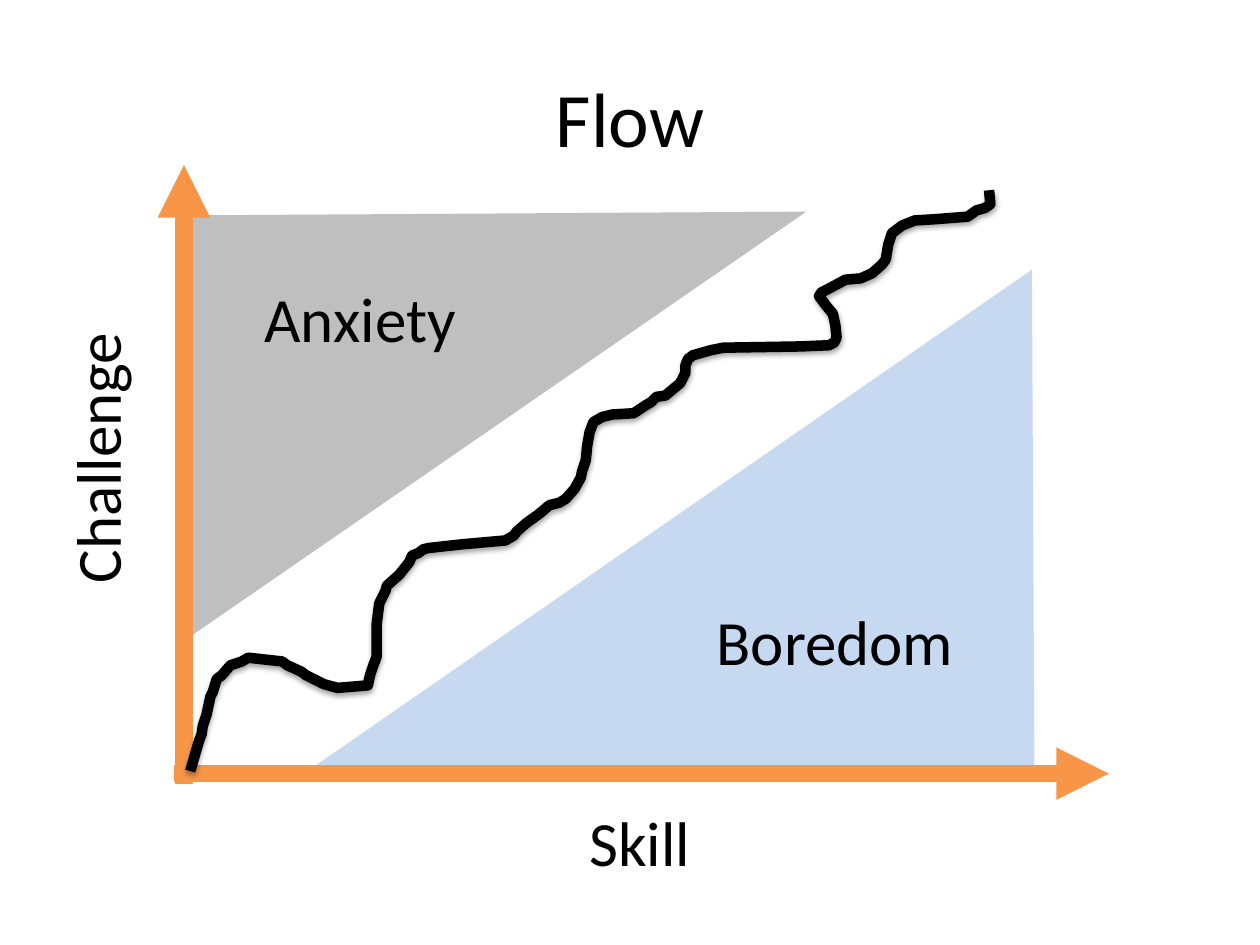
import lxml.etree
import pptx
import pptx.dml.color
import pptx.enum.dml
import pptx.enum.shapes
import pptx.enum.text
import pptx.oxml.ns
import pptx.util

EMU_PER_PX = 9144
BLACK = pptx.dml.color.RGBColor(0x00, 0x00, 0x00)
ORANGE = pptx.dml.color.RGBColor(0xF7, 0x96, 0x46)
GRAY = pptx.dml.color.RGBColor(0xBF, 0xBF, 0xBF)
LIGHT_BLUE = pptx.dml.color.RGBColor(0xC6, 0xD9, 0xF1)

ANXIETY_CORNERS = [(1, 377), (494, 37), (-2, 40)]
BOREDOM_CORNERS = [(98, 481), (673, 83), (675, 480)]
FLOW_POINTS = [
    (0, 461), (7, 437), (9, 432), (10, 425), (13, 416), (16, 402), (18, 398),
    (21, 388), (25, 385), (32, 377), (41, 374), (46, 371), (73, 374), (77, 377),
    (88, 382), (92, 385), (98, 388), (106, 392), (117, 395), (141, 393),
    (142, 388), (143, 384), (145, 378), (148, 370), (148, 344), (150, 328),
    (152, 324), (155, 318), (156, 314), (166, 305), (170, 300), (174, 295),
    (176, 290), (181, 288), (185, 285), (189, 284), (216, 281), (250, 278),
    (257, 274), (259, 271), (267, 264), (274, 259), (278, 256), (285, 250),
    (293, 248), (298, 245), (305, 237), (310, 228), (311, 223), (314, 214),
    (315, 203), (317, 192), (320, 184), (327, 180), (335, 178), (352, 177),
    (361, 171), (366, 168), (370, 164), (377, 163), (389, 153), (391, 149),
    (393, 145), (393, 139), (395, 134), (399, 131), (413, 127), (423, 125),
    (484, 124), (507, 123), (511, 121), (513, 117), (512, 107), (510, 98),
    (505, 92), (499, 84), (501, 81), (507, 78), (520, 71), (532, 70),
    (541, 66), (549, 59), (552, 55), (554, 43), (557, 34), (565, 28),
    (575, 24), (591, 23), (617, 21), (624, 16), (631, 14), (635, 11), (634, 0),
]


def px(value):
    return pptx.util.Emu(value * EMU_PER_PX)


def add_outline(page, left, top, points, closed):
    builder = page.shapes.build_freeform(*points[0], scale=EMU_PER_PX)
    builder.add_line_segments(points[1:], close=closed)
    shape = builder.convert_to_shape(px(left), px(top))
    shape.shadow.inherit = False
    return shape


def add_region(page, box, corners, color):
    region = add_outline(page, box[0], box[1], corners, True)
    region.fill.solid()
    region.fill.fore_color.rgb = color
    region.line.fill.background()


def add_axis(page, start, end):
    axis = page.shapes.add_connector(
        pptx.enum.shapes.MSO_CONNECTOR.STRAIGHT,
        px(start[0]), px(start[1]), px(end[0]), px(end[1]))
    axis.line.color.rgb = ORANGE
    axis.line.width = pptx.util.Pt(10)
    line = axis.line._get_or_add_ln()
    lxml.etree.SubElement(line, pptx.oxml.ns.qn("a:tailEnd"), type="triangle")
    lxml.etree.SubElement(axis._element.spPr, pptx.oxml.ns.qn("a:effectLst"))


def add_flow_path(page, left, top):
    curve = add_outline(page, left, top, FLOW_POINTS, False)
    curve.fill.background()
    curve.line.color.rgb = BLACK
    curve.line.width = pptx.util.Pt(6)
    qn = pptx.oxml.ns.qn
    lxml.etree.SubElement(curve.line._get_or_add_ln(), qn("a:round"))
    effects = curve._element.spPr.find(qn("a:effectLst"))
    shadow = lxml.etree.SubElement(
        effects, qn("a:outerShdw"), blurRad=str(pptx.util.Pt(3.1)),
        dist=str(pptx.util.Pt(1.8)), dir="5400000", rotWithShape="0")
    color = lxml.etree.SubElement(shadow, qn("a:srgbClr"), val=str(BLACK))
    lxml.etree.SubElement(color, qn("a:alpha"), val="35000")


def add_text(page, box, text, size):
    label = page.shapes.add_textbox(*map(px, box))
    frame = label.text_frame
    frame.text = text
    frame.word_wrap = False
    font = frame.paragraphs[0].runs[0].font
    font.name = "Calibri"
    font.size = pptx.util.Pt(size)
    font.color.rgb = BLACK
    return label


def add_label(page, box, text):
    label = add_text(page, box, text, 36)
    label.text_frame.auto_size = pptx.enum.text.MSO_AUTO_SIZE.SHAPE_TO_FIT_TEXT
    return label


def add_title(page, box):
    frame = add_text(page, box, "Flow", 44).text_frame
    frame.word_wrap = True
    frame.vertical_anchor = pptx.enum.text.MSO_ANCHOR.MIDDLE
    frame.paragraphs[0].alignment = pptx.enum.text.PP_ALIGN.CENTER


def add_flow_diagram(page, box):
    left, top, width, height = box
    bottom = top + height
    add_region(page, box, BOREDOM_CORNERS, LIGHT_BLUE)
    add_region(page, box, ANXIETY_CORNERS, GRAY)
    add_axis(page, (left - 8, bottom), (left + width, bottom))
    add_axis(page, (left, bottom + 8), (left, top))
    add_label(page, (left + 312, bottom + 19, 101, 71), "Skill")
    add_label(page, (left - 180, top + 196, 221, 71), "Challenge").rotation = 270
    add_flow_path(page, left + 5, top + 20)
    add_label(page, (left + 54, top + 86, 173, 71), "Anxiety")
    add_label(page, (left + 413, top + 342, 210, 71), "Boredom")


def main():
    deck = pptx.Presentation()
    deck.slide_width = px(1000)
    deck.slide_height = px(750)
    page = deck.slides.add_slide(deck.slide_layouts[6])
    add_title(page, (50, 30, 900, 125))
    add_flow_diagram(page, (146, 131, 734, 483))
    deck.save("out.pptx")


if __name__ == "__main__":
    main()
